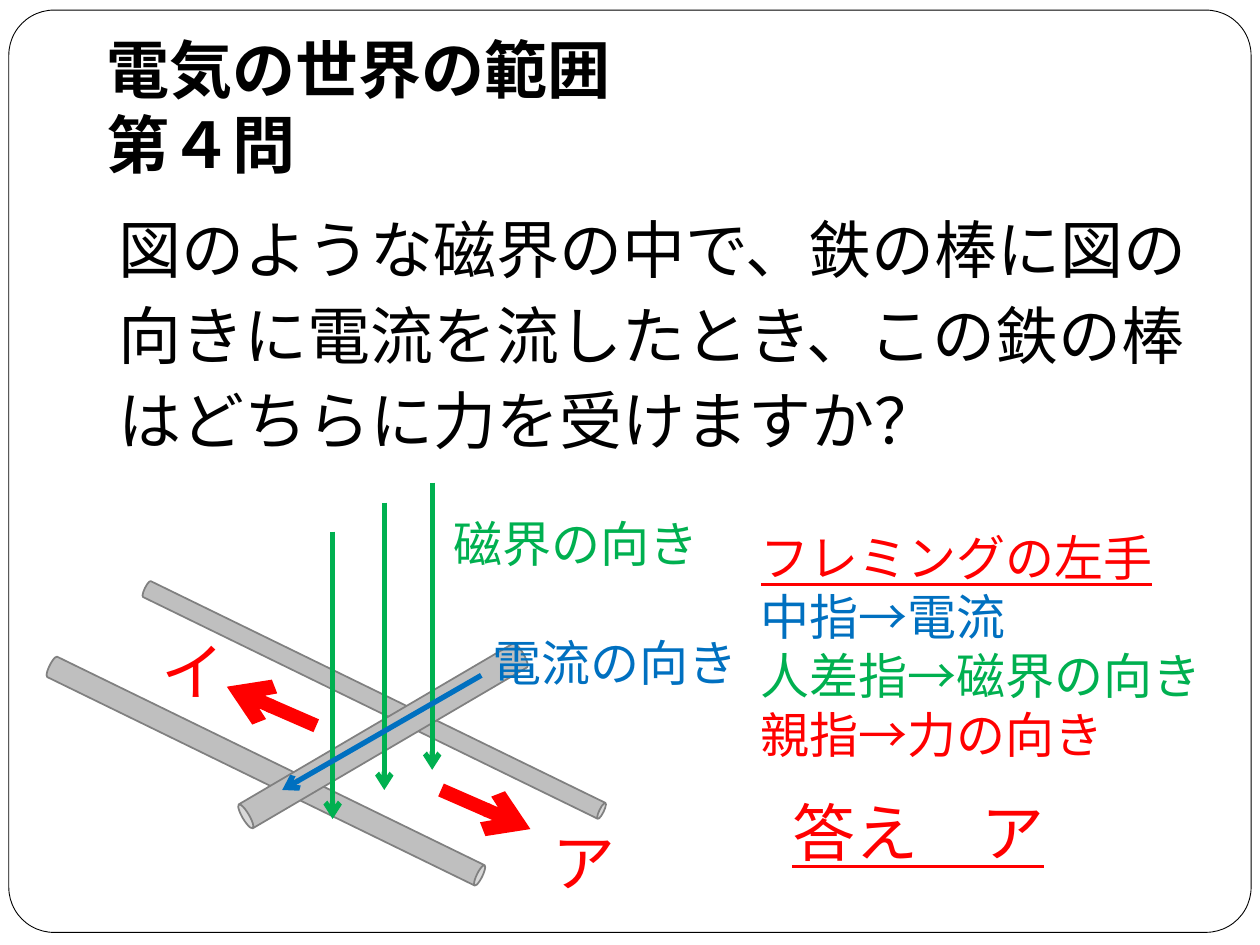
from lxml import etree
from pptx import Presentation
from pptx.dml.color import RGBColor
from pptx.enum.shapes import MSO_CONNECTOR, MSO_SHAPE
from pptx.enum.text import MSO_ANCHOR
from pptx.oxml.ns import qn
from pptx.util import Inches, Pt

BLACK, RED, GREEN, BLUE = "000000", "FF0000", "00B050", "0070C0"
BODY_FONT, TITLE_FONT = "Times New Roman", "Cabin"


def color(hex_code):
    return RGBColor.from_string(hex_code)


def add_text(slide, box, lines, size, font=BODY_FONT, bold=False, gap=0):
    """Add a text box; each line is (text, colour, underlined)."""
    frame = slide.shapes.add_textbox(*map(Inches, box)).text_frame
    frame.word_wrap = True
    for index, (text, ink, underlined) in enumerate(lines):
        paragraph = frame.add_paragraph() if index else frame.paragraphs[0]
        paragraph.text = text
        if index and gap:
            paragraph.space_before = Pt(gap)
        for run in paragraph.runs:
            run.font.name = font
            run.font.size = Pt(size)
            run.font.bold = bold
            run.font.underline = underlined
            run.font.color.rgb = color(ink)
    return frame


def add_solid(slide, kind, box, fill, line, line_width):
    shape = slide.shapes.add_shape(kind, *map(Inches, box))
    shape.shadow.inherit = False
    shape.fill.solid()
    shape.fill.fore_color.rgb = color(fill)
    shape.line.color.rgb = color(line)
    shape.line.width = Pt(line_width)
    return shape


def add_arrow(slide, start, end, ink, width):
    arrow = slide.shapes.add_connector(
        MSO_CONNECTOR.STRAIGHT, *map(Inches, (*start, *end)))
    arrow.line.color.rgb = color(ink)
    arrow.line.width = Pt(width)
    etree.SubElement(arrow.line._get_or_add_ln(), qn("a:tailEnd"), type="arrow")
    etree.SubElement(arrow._element.spPr, qn("a:effectLst"))


def add_frame(slide, box):
    frame = add_solid(slide, MSO_SHAPE.ROUNDED_RECTANGLE, box, "FFFFFF", BLACK, 0.5)
    frame.adjustments[0] = 0.049


def add_title(slide, box):
    frame = add_text(slide, box, [("電気の世界の範囲\v第４問", BLACK, False)],
                     36, TITLE_FONT, bold=True)
    frame.vertical_anchor = MSO_ANCHOR.BOTTOM
    frame.margin_bottom = Inches(0.1)


def add_question(slide, box):
    lines = ("図のような磁界の中で、鉄の棒に図の",
             "向きに電流を流したとき、この鉄の棒",
             "はどちらに力を受けますか？")
    add_text(slide, box, [(line, BLACK, False) for line in lines], 36, gap=5.8)


def add_rail_diagram(slide, left, top):
    """Draw the iron rod on two rails with field, current and force arrows."""
    def at(x, y):
        return left + x, top + y

    rods = [(2.6, 0.03, 0.14, 4.05, 116),
            (1.72, 0.71, 0.18, 3.82, 116),
            (2.63, 1.05, 0.22, 2.58, 239.6)]
    for x, y, width, length, angle in rods:
        rod = add_solid(slide, MSO_SHAPE.CAN, (*at(x, y), width, length),
                        "BFBFBF", "808080", 1)
        rod.rotation = angle

    for x, y in [(2.75, 0.49), (3.13, 0.33), (2.34, 0.72)]:
        add_arrow(slide, at(x, y), at(x, y + 2.28), GREEN, 3)
    add_arrow(slide, at(3.52, 1.86), at(1.94, 2.77), BLUE, 3)
    add_arrow(slide, at(3.2, 2.77), at(3.91, 3.08), RED, 8)
    add_arrow(slide, at(2.21, 2.26), at(1.5, 1.95), RED, 8)

    labels = [("磁界の向き", 3.2, 0.53, 2.36, 0.57, 28, GREEN),
              ("電流の向き", 3.51, 1.47, 2.36, 0.57, 28, BLUE),
              ("ア", 3.99, 2.99, 0.7, 0.71, 36, RED),
              ("イ", 0.88, 1.47, 0.7, 0.71, 36, RED)]
    for text, x, y, width, height, size, ink in labels:
        add_text(slide, (*at(x, y), width, height), [(text, ink, False)], size)


def add_left_hand_rule(slide, box):
    add_text(slide, box, [("フレミングの左手", RED, True),
                          ("中指→電流", BLUE, False),
                          ("人差指→磁界の向き", GREEN, False),
                          ("親指→力の向き", RED, False)], 28)


def add_answer(slide, box):
    add_text(slide, box, [("答え　ア", RED, True)], 36)


def main():
    presentation = Presentation()
    presentation.slide_width = Inches(10)
    presentation.slide_height = Inches(7.5)
    slide = presentation.slides.add_slide(presentation.slide_layouts[6])
    add_frame(slide, (0.07, 0.08, 9.86, 7.32))
    add_title(slide, (0.75, 0.29, 8.5, 1.25))
    add_question(slide, (0.84, 1.62, 8.78, 2.51))
    add_rail_diagram(slide, 0.3, 3.5)
    add_left_hand_rule(slide, (5.94, 4.14, 3.78, 1.99))
    add_answer(slide, (6.19, 6.25, 2.83, 0.94))
    presentation.save("out.pptx")


if __name__ == "__main__":
    main()
